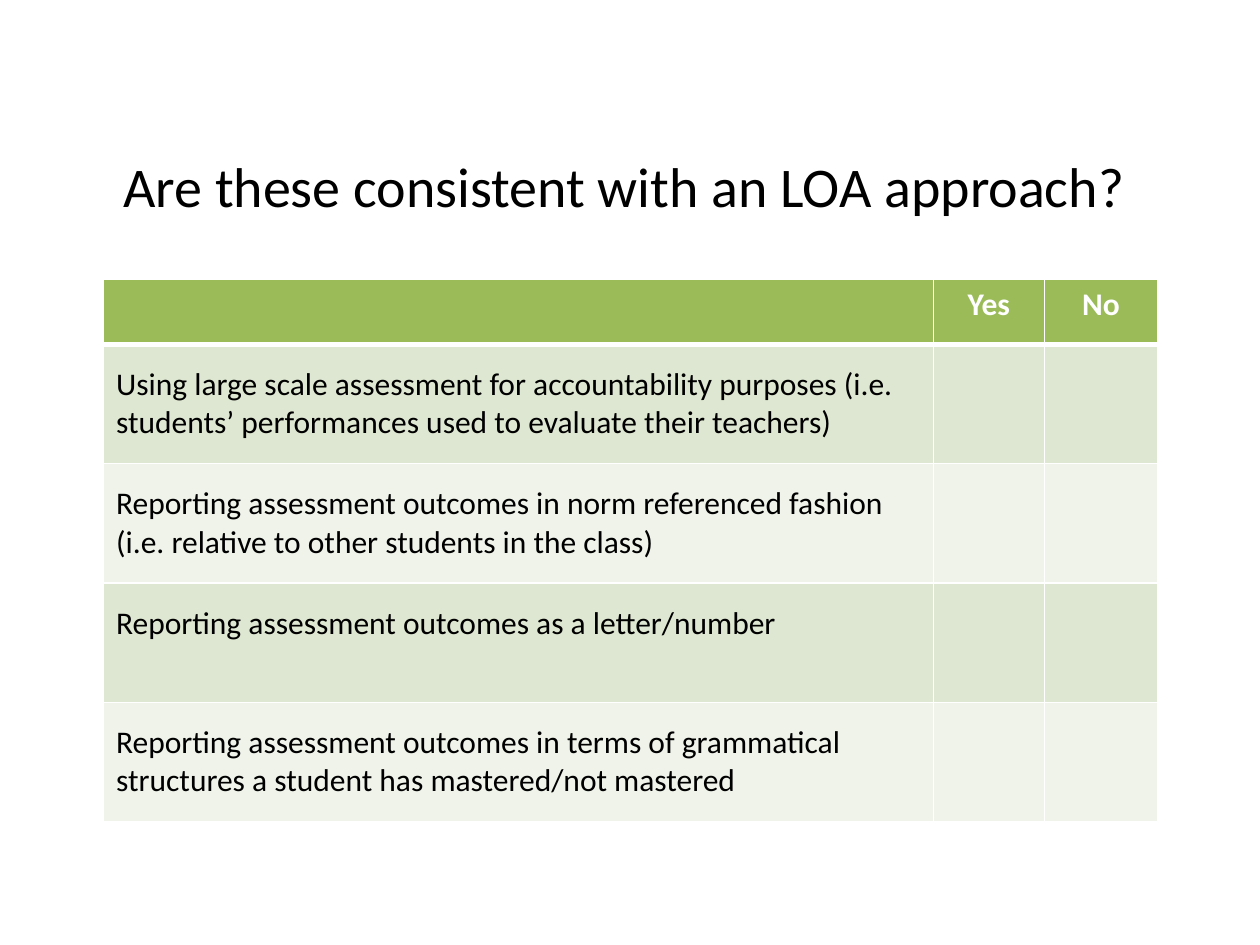
from dataclasses import dataclass

from lxml import etree
from pptx import Presentation
from pptx.dml.color import RGBColor
from pptx.enum.text import MSO_AUTO_SIZE, PP_ALIGN
from pptx.oxml.ns import qn
from pptx.util import Pt

CENTER = PP_ALIGN.CENTER
LEFT = PP_ALIGN.LEFT
GROW = MSO_AUTO_SIZE.SHAPE_TO_FIT_TEXT
FONT = "Calibri"
COLORS = {
    "white": "FFFFFF",
    "black": "000000",
    "head": "9BBB59",
    "dark": "DEE7D1",
    "light": "EFF3EA",
}


@dataclass
class Row:
    texts: tuple[str, str, str]
    fill: str
    high: float
    ink: str = "black"
    bold: bool = False
    align: PP_ALIGN = LEFT
    inset: float = 12.1
    top: float = 1
    base: float = 1


ROWS = [
    Row(("", "Yes", "No"), "head", 37.4, "white", True, CENTER, 3.6, base=3),
    Row(("Using large scale assessment for accountability purposes "
         "(i.e. students’ performances used to evaluate their teachers)",
         "", ""), "dark", 68.2, top=3),
    Row(("Reporting assessment outcomes in norm referenced fashion "
         "(i.e. relative to other students in the class)", "", ""),
        "light", 68.2),
    Row(("Reporting assessment outcomes as a letter/number", "", ""),
        "dark", 68.2),
    Row(("Reporting assessment outcomes in terms of grammatical "
         "structures a student has mastered/not mastered", "", ""),
        "light", 68.2),
]
WIDTHS = [474.2, 63.4, 64.8]


def write(par, text: str, size: float, ink: str, bold: bool) -> None:
    run = par.add_run()
    run.text = text
    run.font.name = FONT
    run.font.size = Pt(size)
    run.font.bold = bold
    run.font.color.rgb = RGBColor.from_string(COLORS[ink])


def edge(cell, side: str, width: float) -> None:
    props = cell._tc.get_or_add_tcPr()
    line = etree.SubElement(props, qn(f"a:ln{side}"), w=str(Pt(width)))
    fill = etree.SubElement(line, qn("a:solidFill"))
    etree.SubElement(fill, qn("a:srgbClr"), val=COLORS["white"])


def draw_cell(cell, row: Row, text: str) -> None:
    for side, width in zip("LRTB", (1, 1, row.top, row.base)):
        edge(cell, side, width)
    cell.fill.solid()
    cell.fill.fore_color.rgb = RGBColor.from_string(COLORS[row.fill])
    if text:
        cell.margin_top = Pt(row.inset)
        par = cell.text_frame.paragraphs[0]
        par.alignment = row.align
        write(par, text, 18, row.ink, row.bold)


def draw_table(slide, rows: list[Row], left: float, top: float) -> None:
    high = sum(row.high for row in rows)
    table = slide.shapes.add_table(
        len(rows), len(WIDTHS), Pt(left), Pt(top), Pt(sum(WIDTHS)), Pt(high)
    ).table
    table.first_row = False
    table.horz_banding = False
    for col, width in zip(table.columns, WIDTHS):
        col.width = Pt(width)
    for line, row in zip(table.rows, rows):
        line.height = Pt(row.high)
        for cell, text in zip(line.cells, row.texts):
            draw_cell(cell, row, text)


def draw_title(slide, text: str) -> None:
    box = slide.shapes.add_textbox(Pt(63.4), Pt(82.8), Pt(592.6), Pt(46))
    frame = box.text_frame
    frame.word_wrap = False
    frame.auto_size = GROW
    write(frame.paragraphs[0], text, 32, "black", False)


def main() -> None:
    deck = Presentation()
    deck.slide_width = Pt(720)
    deck.slide_height = Pt(540)
    slide = deck.slides.add_slide(deck.slide_layouts[6])
    draw_table(slide, ROWS, 59.2, 159.4)
    draw_title(slide, "Are these consistent with an LOA approach?")
    deck.save("out.pptx")


if __name__ == "__main__":
    main()
